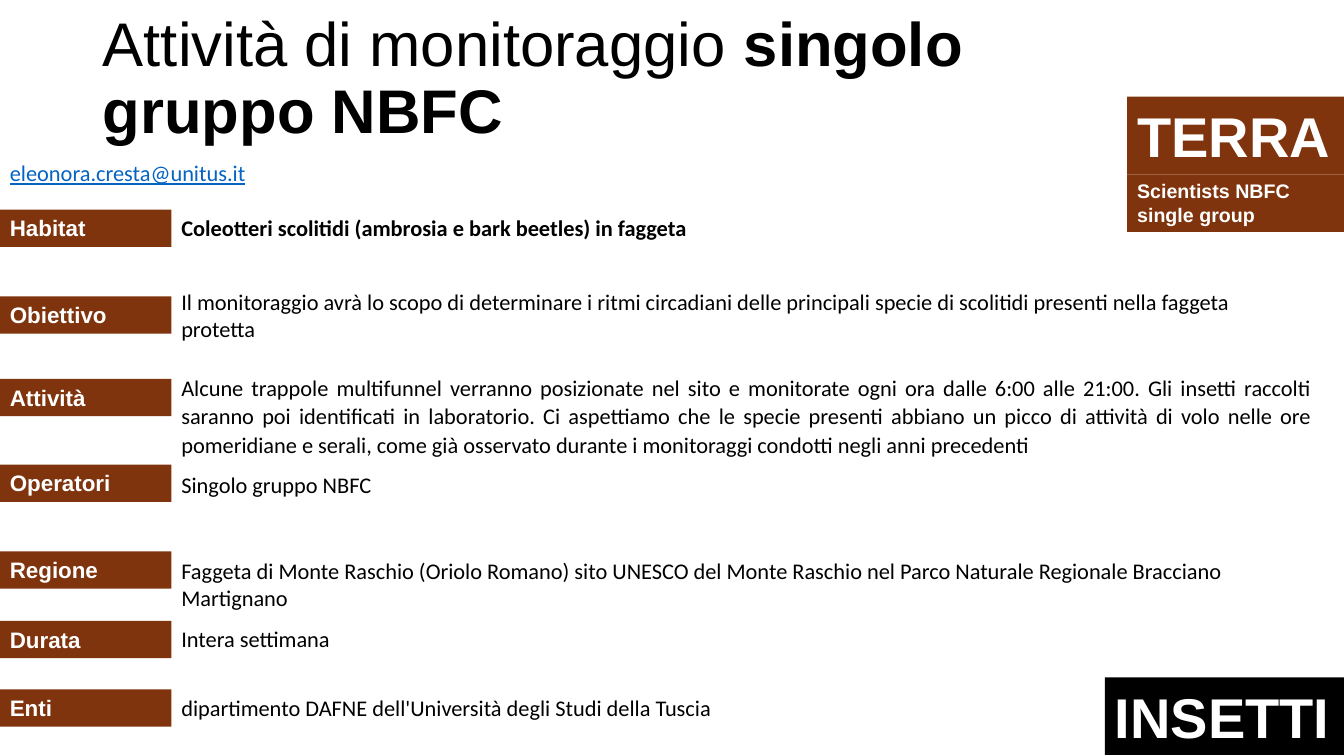
from pptx import Presentation
from pptx.dml.color import RGBColor
from pptx.enum.shapes import MSO_SHAPE
from pptx.enum.text import MSO_ANCHOR, MSO_AUTO_SIZE, PP_ALIGN
from pptx.util import Inches, Pt

BROWN, BLACK, WHITE, LINK_BLUE = "7F340D", "000000", "FFFFFF", "0563C1"
LABEL_WIDTH, LINE_HEIGHT = 1.7, 0.37


def style_font(span, name, size, color, bold=False):
    span.font.name = name
    span.font.size = Pt(size)
    span.font.bold = bold
    span.font.color.rgb = RGBColor.from_string(color)


def add_text(left, top, width, height, text, font, size, color, bold=False, fill=None):
    """Add left-aligned text, in a filled rectangle if a fill is given; return its paragraph."""
    area = [Inches(value) for value in (left, top, width, height)]
    if fill:
        box = page.shapes.add_shape(MSO_SHAPE.RECTANGLE, *area)
        box.shadow.inherit = False
        box.fill.solid()
        box.fill.fore_color.rgb = RGBColor.from_string(fill)
        box.line.fill.background()
    else:
        box = page.shapes.add_textbox(*area)
    frame = box.text_frame
    frame.word_wrap = True
    frame.vertical_anchor = MSO_ANCHOR.TOP
    frame.text = text
    para = frame.paragraphs[0]
    para.alignment = PP_ALIGN.LEFT
    style_font(para.runs[0], font, size, color, bold)
    return para


deck = Presentation()
deck.slide_width, deck.slide_height = Inches(13.33), Inches(7.5)
page = deck.slides.add_slide(deck.slide_layouts[5])

title = page.shapes.title
title.left, title.top = Inches(0.92), Inches(0.07)
title.width, title.height = Inches(10.7), Inches(1.45)
title.text_frame.auto_size = MSO_AUTO_SIZE.NONE
title.text_frame.vertical_anchor = MSO_ANCHOR.MIDDLE
heading = title.text_frame.paragraphs[0]
heading.alignment = PP_ALIGN.LEFT
heading.line_spacing = 0.9
for text, bold in [("Attività di monitoraggio ", False), ("singolo gruppo NBFC", True)]:
    span = heading.add_run()
    span.text = text
    style_font(span, "Arial", 44, BLACK, bold)

email = add_text(0, 1.51, 9.43, 0.38, "eleonora.cresta@unitus.it", "Calibri", 16, LINK_BLUE)
email.line_spacing = 1.07
email.runs[0].font.underline = True

# label, label top, text top, text width, text height, justified, text
rows = [
    ("Habitat", 2.08, 2.08, 11.13, LINE_HEIGHT, False,
     "Coleotteri scolitidi (ambrosia e bark beetles) in faggeta"),
    ("Obiettivo", 2.94, 2.81, 11.13, 0.64, False,
     "Il monitoraggio avrà lo scopo di determinare i ritmi circadiani delle principali "
     "specie di scolitidi presenti nella faggeta protetta"),
    ("Attività", 3.76, 3.64, 11.41, 0.99, True,
     "Alcune trappole multifunnel verranno posizionate nel sito e monitorate ogni ora "
     "dalle 6:00 alle 21:00. Gli insetti raccolti saranno poi identificati in laboratorio. "
     "Ci aspettiamo che le specie presenti abbiano un picco di attività di volo nelle ore "
     "pomeridiane e serali, come già osservato durante i monitoraggi condotti negli anni "
     "precedenti"),
    ("Operatori", 4.61, 4.61, 10.62, 0.38, True, "Singolo gruppo NBFC"),
    ("Regione", 5.47, 5.48, 11.32, 0.64, False,
     "Faggeta di Monte Raschio (Oriolo Romano) sito UNESCO del Monte Raschio nel Parco "
     "Naturale Regionale Bracciano Martignano"),
    ("Durata", 6.16, 6.15, 11.41, LINE_HEIGHT, False, "Intera settimana"),
    ("Enti", 6.84, 6.84, 6.78, LINE_HEIGHT, False,
     "dipartimento DAFNE dell'Università degli Studi della Tuscia"),
]
for label, label_top, top, width, height, justified, text in rows:
    add_text(0, label_top, LABEL_WIDTH, LINE_HEIGHT, label, "Arial", 16, WHITE, True, BROWN)
    para = add_text(LABEL_WIDTH, top, width, height, text, "Calibri", 16, BLACK,
                    label == "Habitat")
    if justified:
        para.alignment = PP_ALIGN.JUSTIFY
        para.line_spacing = 1.07

badges = [
    (11.18, 1.73, 2.15, 0.57, "Scientists NBFC single group", 14, BROWN),
    (11.18, 0.96, 2.15, 0.77, "TERRA", 40, BROWN),
    (10.96, 6.72, 2.37, 0.77, "INSETTI", 40, BLACK),
]
for left, top, width, height, text, size, fill in badges:
    add_text(left, top, width, height, text, "Arial", size, WHITE, True, fill)

deck.save("out.pptx")
